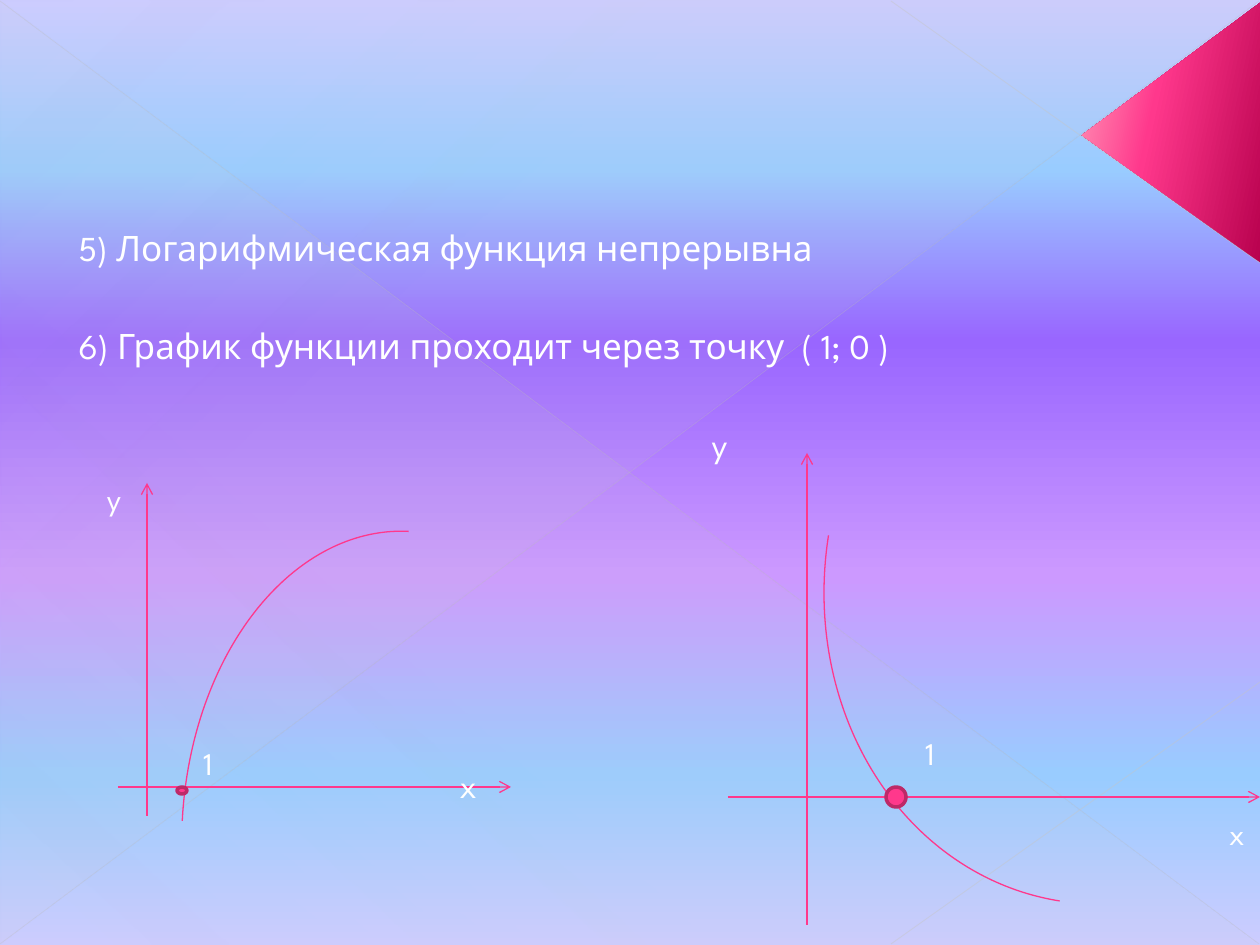
from lxml.etree import SubElement
from pptx import Presentation
from pptx.dml.color import RGBColor
from pptx.enum.shapes import MSO_CONNECTOR, MSO_SHAPE
from pptx.enum.text import MSO_ANCHOR, MSO_AUTO_SIZE, PP_ALIGN
from pptx.oxml.ns import qn
from pptx.util import Emu, Pt

SCALE = 914400 / 126
FONT = "League Spartan"
WHITE = RGBColor(0xFF, 0xFF, 0xFF)
PINK = RGBColor(0xFF, 0x38, 0x8C)
DARK_PINK = RGBColor(0xBD, 0x29, 0x68)
CRIMSON = RGBColor(0xB8, 0x01, 0x4E)
LIGHT_PINK = RGBColor(0xFF, 0x9C, 0xB9)
LAVENDER = RGBColor(0xCC, 0xCC, 0xFF)
SKY = RGBColor(0x99, 0xCC, 0xFF)
VIOLET = RGBColor(0x99, 0x66, 0xFF)
LILAC = RGBColor(0xCC, 0x99, 0xFF)
PALE_GREY = RGBColor(0xD2, 0xD2, 0xD2)
GREY = RGBColor(0xBF, 0xBF, 0xBF)
SOFT_GREY = RGBColor(0xC6, 0xC6, 0xC6)


def px(*values):
    return [Emu(round(value * SCALE)) for value in values]


def set_gradient(fill, element, stops, angle):
    fill.gradient()
    gradient = next(element.iter(qn("a:gradFill")))
    for child in list(gradient):
        gradient.remove(child)
    gradient.set("rotWithShape", "1")
    stop_list = SubElement(gradient, qn("a:gsLst"))
    for position, color, opacity in stops:
        stop = SubElement(stop_list, qn("a:gs"), pos=str(position * 1000))
        color_element = SubElement(stop, qn("a:srgbClr"), val=str(color))
        if opacity < 100:
            SubElement(color_element, qn("a:alpha"), val=str(opacity * 1000))
    SubElement(gradient, qn("a:lin"), ang=str(angle * 60000), scaled="0")


presentation = Presentation()
presentation.slide_width, presentation.slide_height = px(1260, 945)
slide = presentation.slides.add_slide(presentation.slide_layouts[1])
shapes = slide.shapes
title = shapes.title._element
title.getparent().remove(title)

background_stops = [
    (0, LAVENDER, 100), (18, SKY, 100), (36, VIOLET, 100),
    (61, LILAC, 100), (82, SKY, 100), (100, LAVENDER, 100),
]
set_gradient(slide.background.fill, slide._element, background_stops, 90)

veil_stops = [(0, PALE_GREY, 10), (70, PALE_GREY, 8), (100, PALE_GREY, 1)]
corner_stops = [(0, CRIMSON, 100), (60, PINK, 100), (100, LIGHT_PINK, 100)]
decorations = [
    (MSO_SHAPE.RIGHT_TRIANGLE, (1, 2, 1258, 943), 0, False, veil_stops, 133),
    (MSO_SHAPE.RIGHT_TRIANGLE, (1, 1, 1258, 943), 0, True, veil_stops, 133),
    (MSO_SHAPE.ISOSCELES_TRIANGLE, (1041, 43, 261, 179), 90, True, corner_stops, 258),
]
for kind, box, rotation, flipped, stops, angle in decorations:
    shape = shapes.add_shape(kind, *px(*box))
    shape.shadow.inherit = False
    shape.rotation = rotation
    if flipped:
        shape._element.spPr.find(qn("a:xfrm")).set("flipV", "1")
    if kind == MSO_SHAPE.ISOSCELES_TRIANGLE:
        shape.adjustments[0] = 0.51
    set_gradient(shape.fill, shape._element, stops, angle)
    shape.line.fill.background()

connectors = [
    ((0, 1, 1259, 944), GREY, 0.39, 35, False),
    ((1260, 682, 891, 944), SOFT_GREY, 0.47, 45, False),
    ((1260, 263, 891, 1), SOFT_GREY, 0.47, 45, False),
    ((0, 944, 1259, 1), GREY, 0.39, 35, False),
    ((147, 816, 147, 483), PINK, 0.75, 100, True),
    ((118, 787, 511, 787), PINK, 0.75, 100, True),
    ((807, 925, 807, 453), PINK, 0.75, 100, True),
    ((728, 797, 1260, 797), PINK, 0.75, 100, True),
]
for ends, color, width, opacity, arrow in connectors:
    connector = shapes.add_connector(MSO_CONNECTOR.STRAIGHT, *px(*ends))
    connector.line.color.rgb = color
    connector.line.width = Pt(width)
    line_element = connector.line._ln
    if opacity < 100:
        color_element = next(line_element.iter(qn("a:srgbClr")))
        SubElement(color_element, qn("a:alpha"), val=str(opacity * 1000))
    if arrow:
        SubElement(line_element, qn("a:tailEnd"), type="arrow")
    SubElement(connector._element.spPr, qn("a:effectLst"))

body = slide.placeholders[1]
shapes._spTree.append(body._element)
body.left, body.top, body.width, body.height = px(59, 217, 1148, 690)
body_format = {
    "word_wrap": True,
    "auto_size": MSO_AUTO_SIZE.NONE,
    "vertical_anchor": MSO_ANCHOR.TOP,
}
for name, value in body_format.items():
    setattr(body.text_frame, name, value)
lines = [
    ("5) Логарифмическая функция непрерывна", 7, 0),
    ("6) График функции проходит через точку  ( 1; 0 )", 7, 30),
    ("y", 640, 30),
    ("x", 388, 169),
]
body.text_frame.text = "\n".join(text for text, indent, gap in lines)
body_font = {"name": FONT, "size": Pt(20)}
for paragraph, (text, indent, gap) in zip(body.text_frame.paragraphs, lines):
    paragraph.line_spacing = Pt(26)
    paragraph.space_before = Pt(gap)
    properties = paragraph._p.get_or_add_pPr()
    properties.set("marL", str(px(indent)[0]))
    properties.set("indent", "0")
    SubElement(properties, qn("a:buNone"))
    font = paragraph.runs[0].font
    font.color.rgb = WHITE
    for name, value in body_font.items():
        setattr(font, name, value)

curves = [((93, 620, 601, 423), 272.9), ((825, 255, 571, 650), 189)]
for box, rotation in curves:
    curve = shapes.add_shape(MSO_SHAPE.ARC, *px(*box))
    curve.shadow.inherit = False
    curve.rotation = rotation
    curve.fill.background()
    curve.line.color.rgb = PINK
    curve.line.width = Pt(0.75)

for box in [(177, 787, 10, 7), (886, 787, 20, 20)]:
    point = shapes.add_shape(MSO_SHAPE.OVAL, *px(*box))
    point.shadow.inherit = False
    point.fill.solid()
    point.fill.fore_color.rgb = PINK
    point.line.color.rgb = DARK_PINK
    point.line.width = Pt(2)

label_format = {"word_wrap": True, "margin_left": 0, "margin_right": 0}
label_font = {"name": FONT, "size": Pt(18)}
labels = [("1", 208, 738), ("y", 114, 473), ("x", 1237, 808), ("1", 930, 728)]
for text, center, top in labels:
    label = shapes.add_textbox(*px(center - 20, top, 40, 50))
    for name, value in label_format.items():
        setattr(label.text_frame, name, value)
    paragraph = label.text_frame.paragraphs[0]
    paragraph.text = text
    paragraph.alignment = PP_ALIGN.CENTER
    paragraph.font.color.rgb = WHITE
    for name, value in label_font.items():
        setattr(paragraph.runs[0].font, name, value)
    paragraph.runs[0].font.color.rgb = WHITE

presentation.save("out.pptx")
